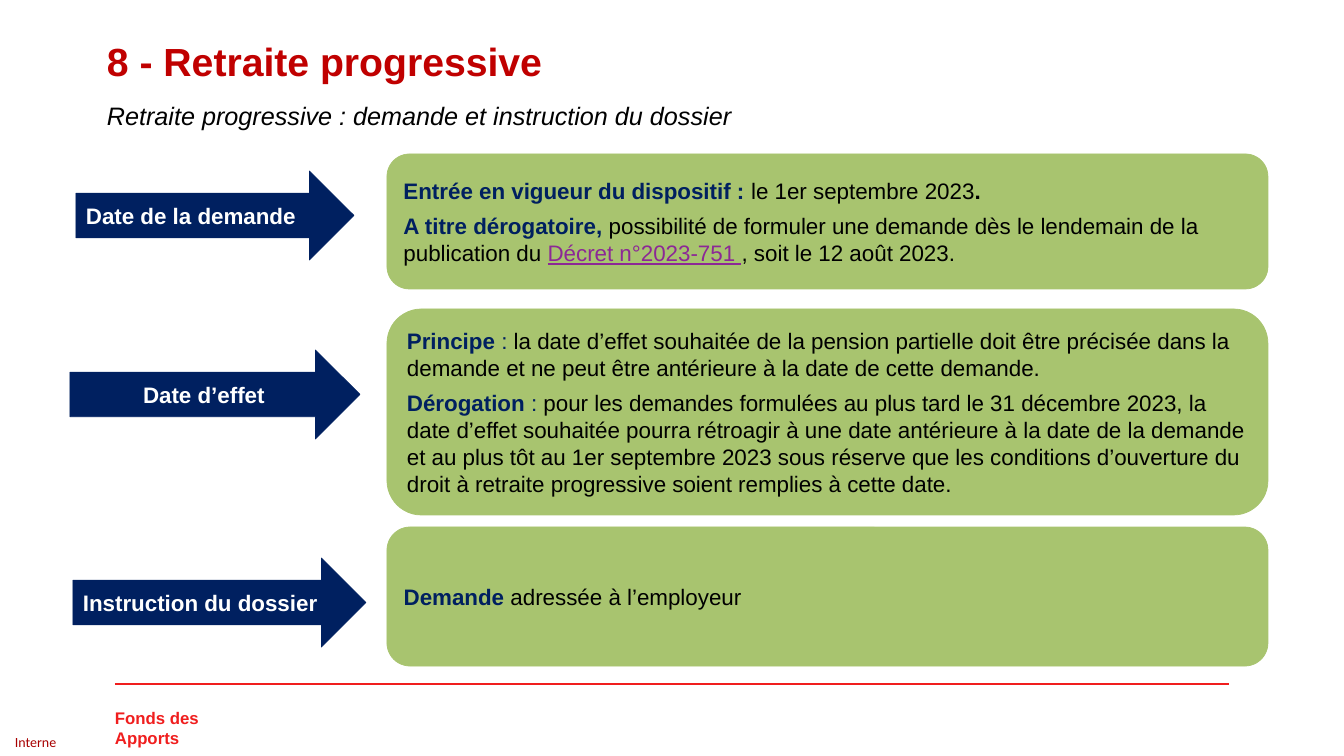
import pptx
import pptx.util
import pptx.dml.color
import pptx.enum.shapes
import pptx.enum.text
import pptx.oxml.ns
import lxml.etree

RGB = pptx.dml.color.RGBColor
NAVY = RGB(0x00, 0x20, 0x60)
GREEN = RGB(0xA8, 0xC4, 0x6F)
RED = RGB(0xF0, 0x1E, 0x1E)
TITLE_RED = RGB(0xC0, 0x00, 0x00)
DARK_RED = RGB(0xA8, 0x00, 0x00)
PURPLE = RGB(0x8C, 0x28, 0x96)
BLACK = RGB(0x00, 0x00, 0x00)
WHITE = RGB(0xFF, 0xFF, 0xFF)

SHAPE = pptx.enum.shapes.MSO_SHAPE
ANCHOR = pptx.enum.text.MSO_ANCHOR
ALIGN = pptx.enum.text.PP_ALIGN

KEY = dict(size=16, color=NAVY, bold=True)
COLON = dict(size=16, color=NAVY)
BODY = dict(size=16, color=BLACK)
STOP = dict(size=16, color=BLACK, bold=True)
LINK = dict(size=16, color=PURPLE, underline=True)
LABEL = dict(size=16, color=WHITE, bold=True)

TEXTS = [
    ("8 - Retraite progressive", (97, 38, 1151, 51),
     dict(size=28, color=TITLE_RED, bold=True), dict(line_spacing=0.9), {}),
    ("Retraite progressive : demande et instruction du dossier", (97, 95, 990, 64),
     dict(size=18, color=BLACK, italic=True), {}, {}),
    ("Fonds des Apports", (105, 703, 171, 30),
     dict(size=12, color=RED, bold=True), {}, dict(word_wrap=False)),
    ("Interne", (15, 727, 57, 29), dict(size=10, color=DARK_RED, name="Calibri"), {},
     dict(vertical_anchor=ANCHOR.MIDDLE, margin_left=0, margin_right=0,
          margin_top=0, margin_bottom=0)),
]
STEPS = [
    ("Date de la demande", ALIGN.LEFT, (76, 171, 278), (154, 135), [
        [("Entrée en vigueur du dispositif : ", KEY), ("le 1er septembre 2023", BODY),
         (".", STOP)],
        [("A titre dérogatoire, ", KEY),
         ("possibilité de formuler une demande dès le lendemain de la publication du ", BODY),
         ("Décret n°2023-751 ", LINK), (", soit le 12 août 2023.", BODY)],
    ]),
    ("Date d’effet", ALIGN.CENTER, (70, 350, 290), (309, 206), [
        [("Principe", KEY), (" : ", COLON),
         ("la date d’effet souhaitée de la pension partielle doit être précisée dans la "
          "demande et ne peut être antérieure à la date de cette demande.", BODY)],
        [("Dérogation", KEY), (" : ", COLON),
         ("pour les demandes formulées au plus tard le 31 décembre 2023, la date d’effet "
          "souhaitée pourra rétroagir à une date antérieure à la date de la demande et au "
          "plus tôt au 1er septembre 2023 sous réserve que les conditions d’ouverture du "
          "droit à retraite progressive soient remplies à cette date.", BODY)],
    ]),
    ("Instruction du dossier", ALIGN.LEFT, (73, 558, 293), (527, 139), [
        [("Demande ", KEY), ("adressée à l’employeur", BODY)],
    ]),
]
ARROW_H = 89
PANEL_X, PANEL_W = 387, 881
RULE = (115, 684, 1229, 684)


def px(*lengths):
    return [pptx.util.Emu(round(n * 914400 / 100.8)) for n in lengths]


def set_all(obj, values):
    for name, value in values.items():
        setattr(obj, name, value)


def write(tf, paragraphs, para_format, gap=0):
    for i, runs in enumerate(paragraphs):
        p = tf.add_paragraph() if i else tf.paragraphs[0]
        set_all(p, para_format)
        if i:
            p.space_before = pptx.util.Pt(gap)
        for text, look in runs:
            r = p.add_run()
            r.text = text
            values = dict(name="Arial", bold=False) | look
            r.font.color.rgb = values.pop("color")
            values["size"] = pptx.util.Pt(values["size"])
            set_all(r.font, values)


def add_block(kind, box, color):
    sp = slide.shapes.add_shape(kind, *px(*box))
    sp.shadow.inherit = False
    sp.fill.solid()
    sp.fill.fore_color.rgb = color
    sp.line.color.rgb = color
    sp.line.width = pptx.util.Pt(0.5)
    set_all(sp.text_frame, dict(word_wrap=True, vertical_anchor=ANCHOR.MIDDLE))
    return sp.text_frame


prs = pptx.Presentation()
prs.slide_width, prs.slide_height = px(1344, 756)
slide = prs.slides.add_slide(prs.slide_layouts[6])

rule = slide.shapes.add_connector(pptx.enum.shapes.MSO_CONNECTOR.STRAIGHT, *px(*RULE))
rule.line.color.rgb = RED
rule.line.width = pptx.util.Pt(2)
lxml.etree.SubElement(rule._element.spPr, pptx.oxml.ns.qn("a:effectLst"))

for text, box, look, para_format, frame in TEXTS:
    tf = slide.shapes.add_textbox(*px(*box)).text_frame
    set_all(tf, dict(word_wrap=True) | frame)
    write(tf, [[(text, look)]], para_format)

for label, align, (x, y, w), (top, height), paragraphs in STEPS:
    tf = add_block(SHAPE.RIGHT_ARROW, (x, y, w, ARROW_H), NAVY)
    write(tf, [[(label, LABEL)]], dict(alignment=align, space_before=pptx.util.Pt(12)))
    tf = add_block(SHAPE.ROUNDED_RECTANGLE, (PANEL_X, top, PANEL_W, height), GREEN)
    write(tf, paragraphs, dict(alignment=ALIGN.LEFT), gap=6)

prs.save("out.pptx")
